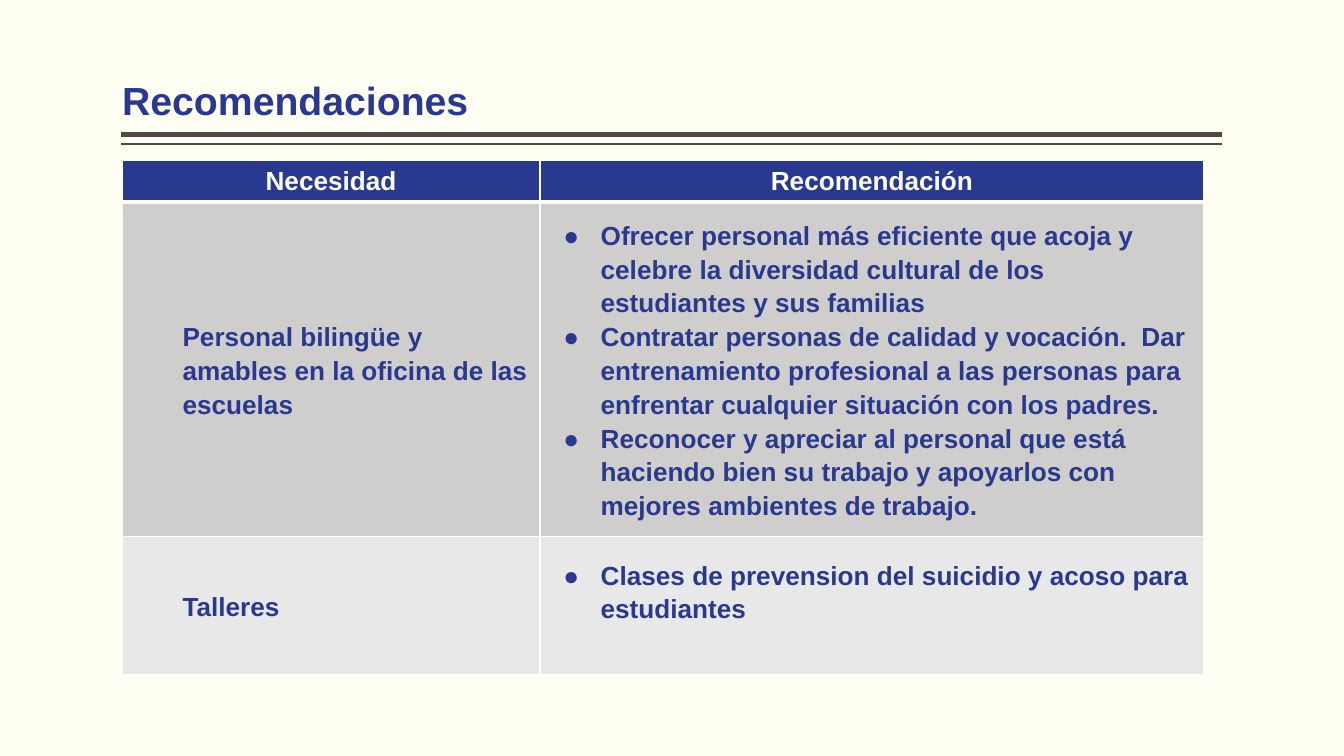
from dataclasses import dataclass

from lxml import etree
from pptx import Presentation
from pptx.dml.color import RGBColor
from pptx.enum.shapes import MSO_CONNECTOR
from pptx.enum.text import MSO_ANCHOR, PP_ALIGN
from pptx.oxml.ns import qn
from pptx.util import Pt

STRAIGHT = MSO_CONNECTOR.STRAIGHT
MIDDLE, BOTTOM = MSO_ANCHOR.MIDDLE, MSO_ANCHOR.BOTTOM
LEFT, CENTER = PP_ALIGN.LEFT, PP_ALIGN.CENTER


@dataclass(frozen=True)
class Theme:
    font: str = "Arial"
    background: str = "FFFFF3"
    blue: str = "2A3990"
    white: str = "FFFFFF"
    rule: str = "514843"
    row_fills: tuple = ("CFCECD", "E8E8E8")
    title_size: int = 21
    table_size: int = 14


THEME = Theme()
MARGIN_LEFT = 65.4
COLUMN_WIDTHS = (224, 355.6)
ROW_HEIGHTS = (22, 168, 74)
TEXT_INDENT, BULLET_HANG = 27, 20
LAST_ROW_BOTTOM = 18.5  # raises the workshop advice above the row's middle

HEADINGS = ("Necesidad", "Recomendación")
NEEDS = (
    (
        "Personal bilingüe y amables en la oficina de las escuelas",
        (
            "Ofrecer personal más eficiente que acoja y celebre la diversidad "
            "cultural de los estudiantes y sus familias",
            "Contratar personas de calidad y vocación.  Dar entrenamiento "
            "profesional a las personas para enfrentar cualquier situación "
            "con los padres.",
            "Reconocer y apreciar al personal que está haciendo bien su "
            "trabajo y apoyarlos con mejores ambientes de trabajo.",
        ),
    ),
    (
        "Talleres",
        ("Clases de prevension del suicidio y acoso para estudiantes",),
    ),
)


def rgb(color):
    return RGBColor.from_string(color)


def style_paragraph(paragraph, size, color, align=LEFT, spacing=1.0):
    paragraph.alignment = align
    paragraph.line_spacing = spacing
    for run in paragraph.runs:
        run.font.name = THEME.font
        run.font.size = Pt(size)
        run.font.bold = True
        run.font.color.rgb = rgb(color)


def indent_paragraph(paragraph, bulleted):
    properties = paragraph._p.get_or_add_pPr()
    properties.set("marL", str(Pt(TEXT_INDENT)))
    properties.set("indent", str(-Pt(BULLET_HANG) if bulleted else 0))
    if bulleted:
        bullet_color = etree.SubElement(properties, qn("a:buClr"))
        etree.SubElement(bullet_color, qn("a:srgbClr"), val=THEME.blue)
        etree.SubElement(properties, qn("a:buFont"), typeface=THEME.font)
        etree.SubElement(properties, qn("a:buChar"), char="●")


def add_title(slide, text):
    title = slide.shapes.add_textbox(Pt(MARGIN_LEFT), Pt(4.3), Pt(589.7), Pt(64.8))
    frame = title.text_frame
    frame.word_wrap = True
    frame.vertical_anchor = BOTTOM
    frame.margin_left = frame.margin_right = 0
    frame.margin_top = frame.margin_bottom = Pt(2.7)
    frame.text = text
    style_paragraph(frame.paragraphs[0], THEME.title_size, THEME.blue, spacing=0.9)


def add_rule(slide, y, weight):
    rule = slide.shapes.add_connector(STRAIGHT, Pt(654.6), Pt(y), Pt(65.1), Pt(y))
    rule.line.color.rgb = rgb(THEME.rule)
    rule.line.width = Pt(weight)
    etree.SubElement(rule._element.spPr, qn("a:effectLst"))


def set_borders(cell, top=1, bottom=1):
    properties = cell._tc.get_or_add_tcPr()
    edges = (("a:lnL", 1), ("a:lnR", 1), ("a:lnT", top), ("a:lnB", bottom))
    for position, (tag, weight) in enumerate(edges):
        border = etree.Element(qn(tag), w=str(Pt(weight)))
        fill = etree.SubElement(border, qn("a:solidFill"))
        etree.SubElement(fill, qn("a:srgbClr"), val=THEME.white)
        properties.insert(position, border)


def fill_cell(cell, text, fill):
    cell.text = text
    cell.vertical_anchor = MIDDLE
    cell.margin_left = cell.margin_right = Pt(5.4)
    cell.margin_top = cell.margin_bottom = Pt(2.7)
    cell.fill.solid()
    cell.fill.fore_color.rgb = rgb(fill)


def fill_header(cell, heading):
    fill_cell(cell, heading, THEME.blue)
    set_borders(cell, bottom=3)
    style_paragraph(
        cell.text_frame.paragraphs[0], THEME.table_size, THEME.white, CENTER
    )


def fill_body(cell, lines, fill, bulleted, top_border):
    fill_cell(cell, "\n".join(lines), fill)
    set_borders(cell, top=top_border)
    for paragraph in cell.text_frame.paragraphs:
        style_paragraph(paragraph, THEME.table_size, THEME.blue, spacing=1.15)
        indent_paragraph(paragraph, bulleted)


def add_needs_table(slide):
    table = slide.shapes.add_table(
        len(ROW_HEIGHTS), len(COLUMN_WIDTHS), Pt(MARGIN_LEFT), Pt(86),
        Pt(sum(COLUMN_WIDTHS)), Pt(sum(ROW_HEIGHTS)),
    ).table
    table.horz_banding = False
    for column, width in zip(table.columns, COLUMN_WIDTHS):
        column.width = Pt(width)
    for row, height in zip(table.rows, ROW_HEIGHTS):
        row.height = Pt(height)

    for column, heading in enumerate(HEADINGS):
        fill_header(table.cell(0, column), heading)
    for row, ((need, advice), fill) in enumerate(zip(NEEDS, THEME.row_fills), 1):
        top_border = 3 if row == 1 else 1
        fill_body(table.cell(row, 0), (need,), fill, False, top_border)
        fill_body(table.cell(row, 1), advice, fill, True, top_border)
    table.cell(len(NEEDS), 1).margin_bottom = Pt(LAST_ROW_BOTTOM)


def main():
    presentation = Presentation()
    presentation.slide_width = Pt(720)
    presentation.slide_height = Pt(405)
    slide = presentation.slides.add_slide(presentation.slide_layouts[6])
    slide.background.fill.solid()
    slide.background.fill.fore_color.rgb = rgb(THEME.background)

    add_rule(slide, 72, 3)
    add_rule(slide, 77, 1)
    add_title(slide, "Recomendaciones")
    add_needs_table(slide)
    presentation.save("out.pptx")


if __name__ == "__main__":
    main()
